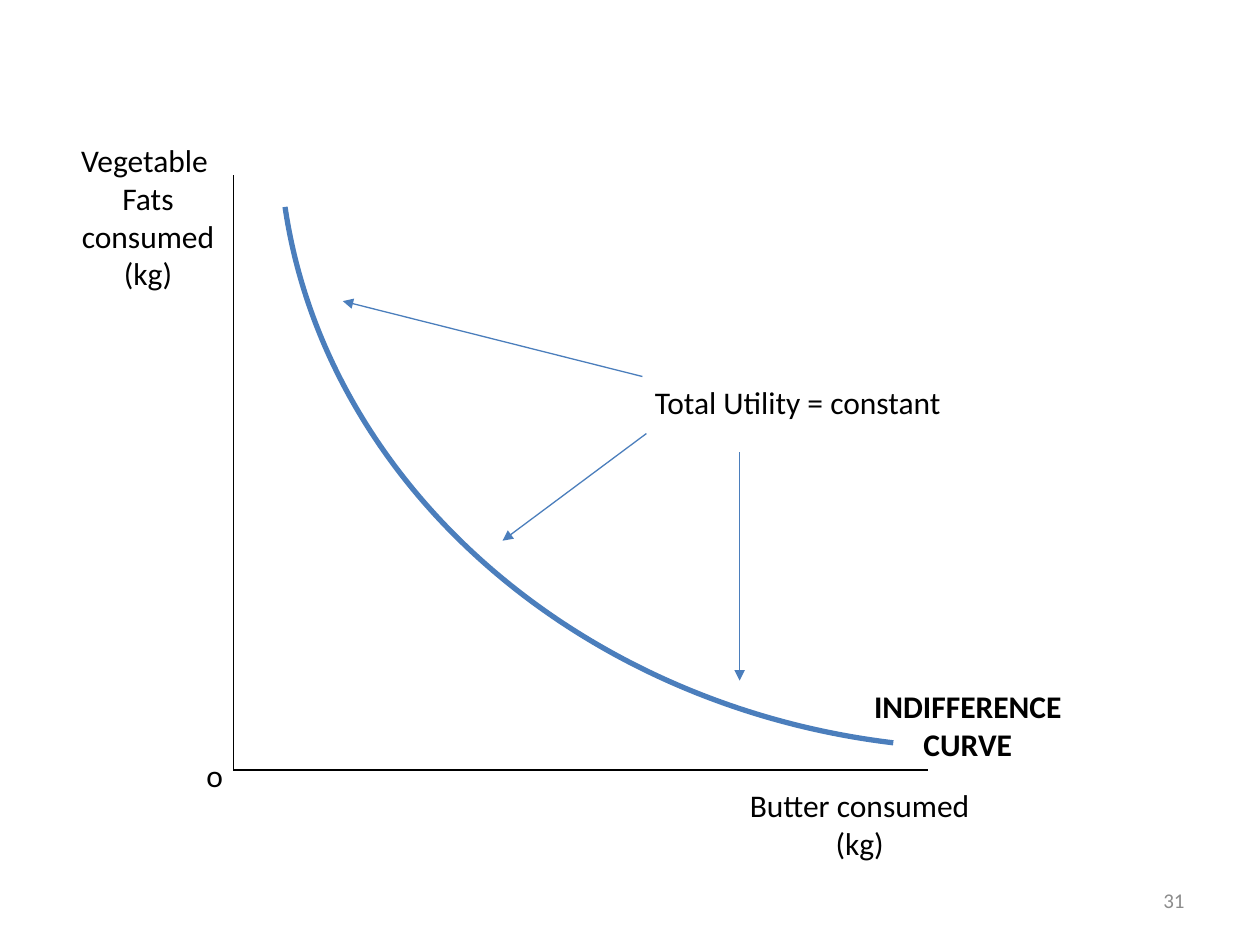
from typing import NamedTuple

from lxml.etree import SubElement
from pptx import Presentation
from pptx.dml.color import RGBColor
from pptx.enum.shapes import MSO_CONNECTOR, MSO_SHAPE
from pptx.enum.text import MSO_ANCHOR, MSO_AUTO_SIZE, PP_ALIGN
from pptx.oxml.ns import qn
from pptx.util import Cm, Pt

BLACK, BLUE, GRAY = "000000", "4B7EBC", "8C8C8C"
ORIGIN = (4.7, 15.52)


class Label(NamedTuple):
    lines: list[str]
    left: float
    top: float
    width: float
    height: float
    align: PP_ALIGN = PP_ALIGN.CENTER
    bold: bool = False
    wrap: bool = False
    size: int = 18
    color: str = BLACK
    anchor: MSO_ANCHOR = MSO_ANCHOR.TOP
    fit: MSO_AUTO_SIZE = MSO_AUTO_SIZE.SHAPE_TO_FIT_TEXT


class Line(NamedTuple):
    start: tuple[float, float]
    end: tuple[float, float]
    color: str = BLUE
    arrow: bool = True


LABELS = [
    Label(["Butter consumed", "(kg)"], 14.83, 15.72, 5, 1.8),
    Label(["Vegetable ", "Fats", "consumed", "(kg)"], 0.89, 2.72, 4.19, 3.33, wrap=True),
    Label(["o"], 3.91, 15.11, 0.86, 1.01, PP_ALIGN.LEFT),
    Label(["Total Utility = constant"], 12.95, 7.59, 6.48, 1.01, PP_ALIGN.LEFT),
    Label(["INDIFFERENCE", "CURVE"], 17.35, 13.72, 4.32, 1.8, bold=True),
    Label(["31"], 18.21, 17.65, 5.92, 1.01, PP_ALIGN.RIGHT, wrap=True, size=12,
          color=GRAY, anchor=MSO_ANCHOR.MIDDLE, fit=MSO_AUTO_SIZE.NONE),
]

AXES = [
    Line((4.7, 3.53), ORIGIN, BLACK, False),
    Line(ORIGIN, (18.7, 15.52), BLACK, False),
]

ARROWS = [
    Line((12.95, 7.59), (6.91, 6.07)),
    Line((13.03, 8.74), (10.13, 10.9)),
    Line((14.91, 9.12), (14.91, 13.72)),
]


def rgb(code: str) -> RGBColor:
    return RGBColor.from_string(code)


def add_label(slide, label: Label) -> None:
    box = slide.shapes.add_textbox(
        Cm(label.left), Cm(label.top), Cm(label.width), Cm(label.height))
    frame = box.text_frame
    frame.text = "\n".join(label.lines)
    frame.word_wrap = label.wrap
    frame.auto_size = label.fit
    frame.vertical_anchor = label.anchor
    for para in frame.paragraphs:
        para.alignment = label.align
        para.font.name = "Calibri"
        para.font.size = Pt(label.size)
        para.font.bold = label.bold
        para.font.color.rgb = rgb(label.color)


def add_line(slide, line: Line) -> None:
    shape = slide.shapes.add_connector(
        MSO_CONNECTOR.STRAIGHT, *map(Cm, line.start + line.end))
    shape.line.color.rgb = rgb(line.color)
    shape.line.width = Pt(0.75)
    if line.arrow:
        SubElement(shape.line._get_or_add_ln(), qn("a:tailEnd"), type="triangle")
    SubElement(shape._element.spPr, qn("a:effectLst"))


def add_curve(slide) -> None:
    """Draw the indifference curve as an arc flipped both ways."""
    arc = slide.shapes.add_shape(
        MSO_SHAPE.ARC, Cm(5.61), Cm(-8.99), Cm(27.64), Cm(24.05))
    arc.adjustments[0] = 162
    arc.adjustments[1] = 209.07
    arc.rotation = 6.8
    frame = arc._element.spPr.find(qn("a:xfrm"))
    frame.set("flipH", "1")
    frame.set("flipV", "1")
    arc.shadow.inherit = False
    arc.fill.background()
    arc.line.color.rgb = rgb(BLUE)
    arc.line.width = Pt(3)


def main() -> None:
    deck = Presentation()
    deck.slide_width, deck.slide_height = Cm(25.4), Cm(19.05)
    slide = deck.slides.add_slide(deck.slide_layouts.get_by_name("Blank"))
    for axis in AXES:
        add_line(slide, axis)
    add_curve(slide)
    for label in LABELS:
        add_label(slide, label)
    for arrow in ARROWS:
        add_line(slide, arrow)
    deck.save("out.pptx")


if __name__ == "__main__":
    main()
